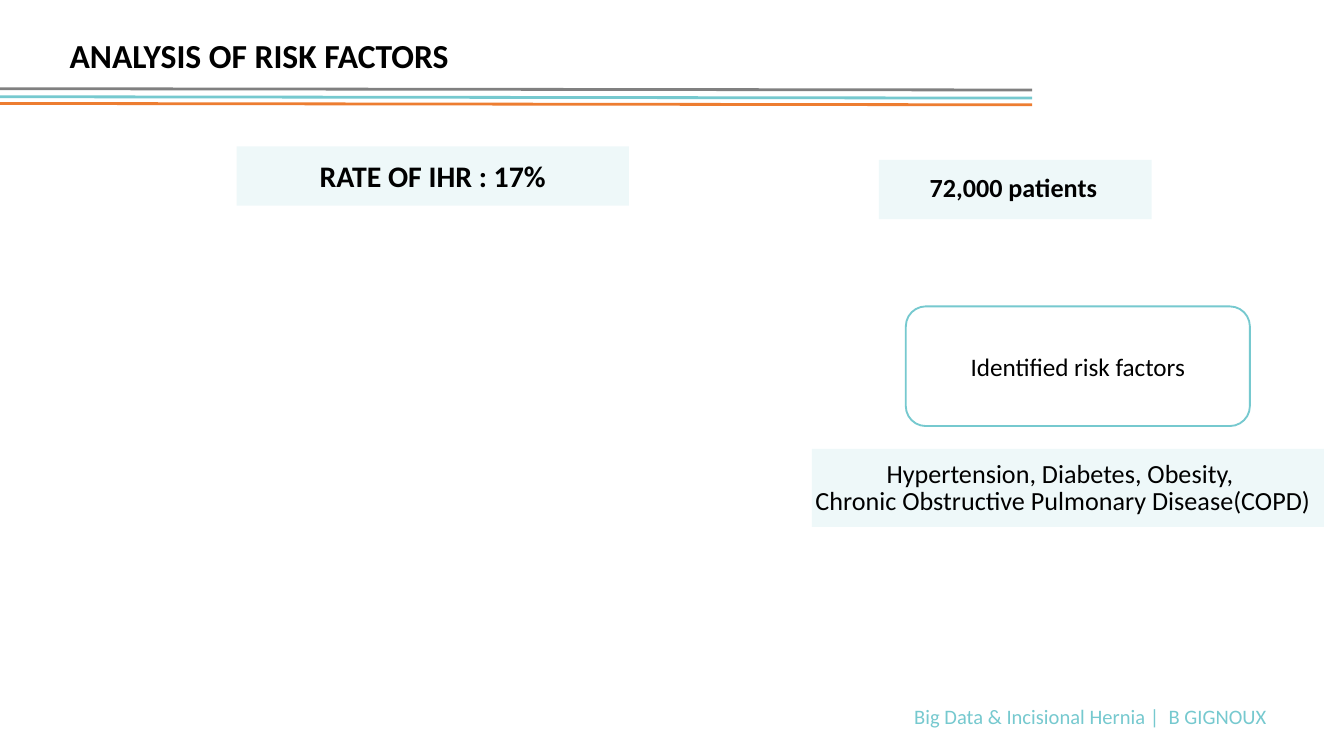
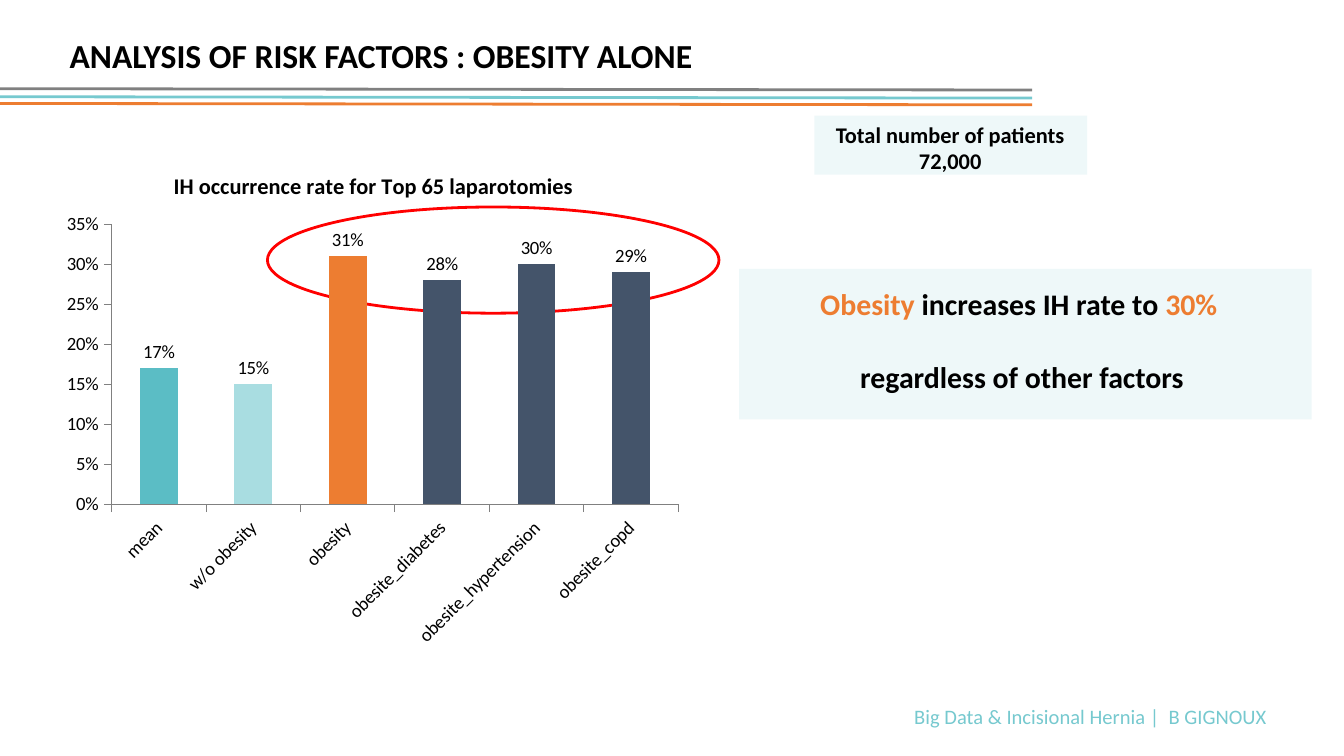
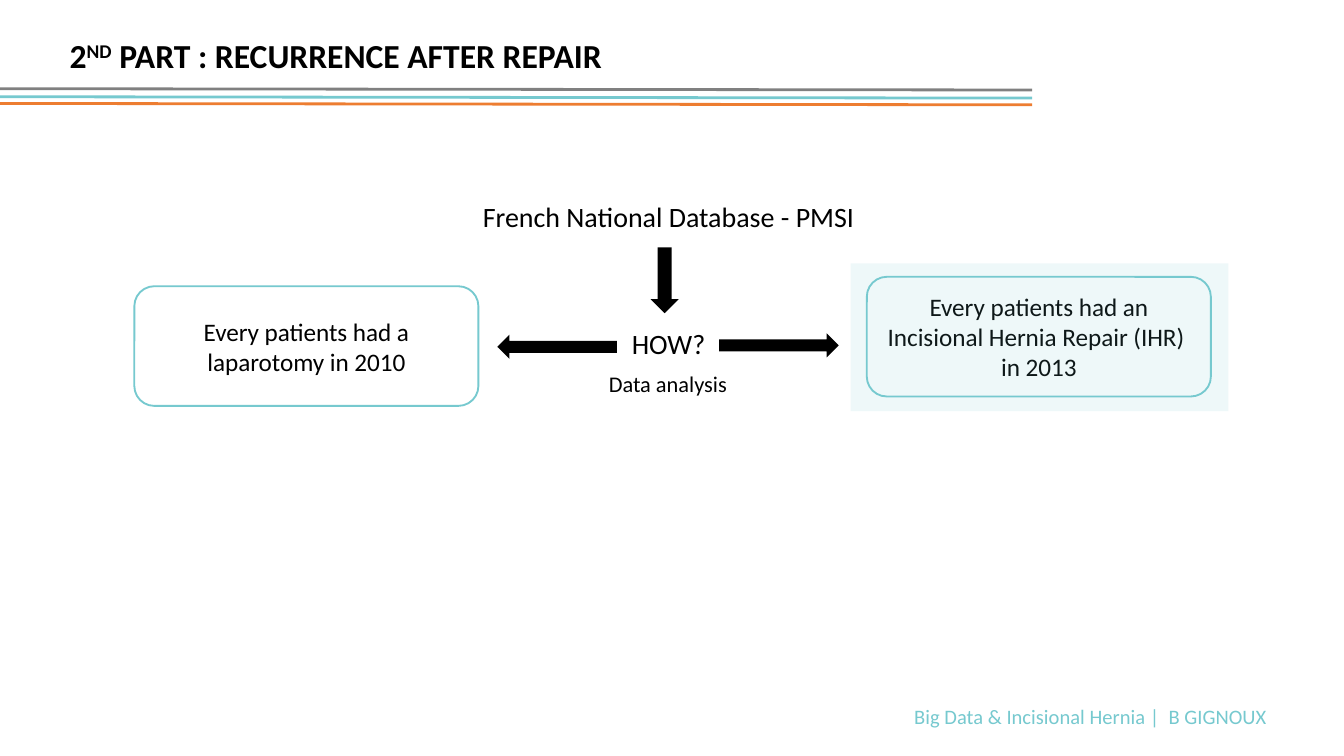
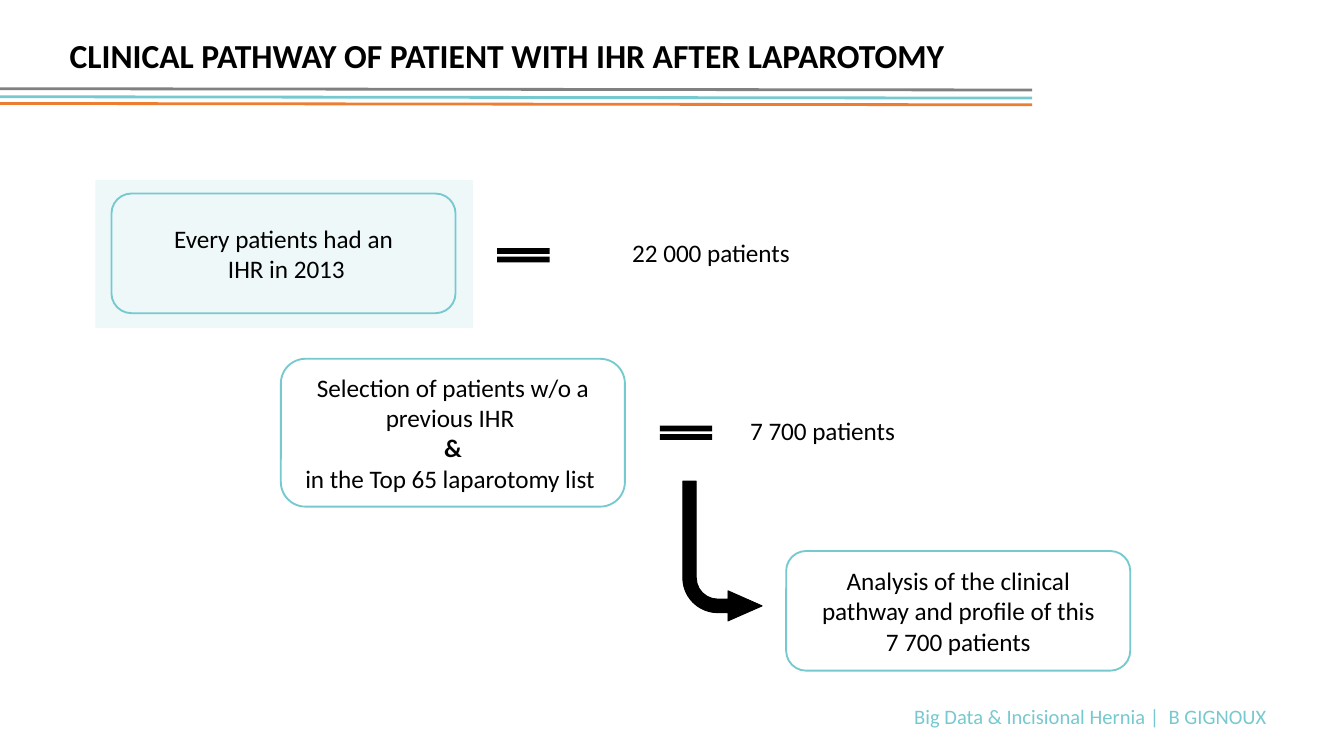
from dataclasses import dataclass
from typing import Optional

from lxml.etree import SubElement
from pptx import Presentation
from pptx.chart.data import CategoryChartData
from pptx.dml.color import RGBColor
from pptx.enum.chart import XL_CHART_TYPE as ChartType
from pptx.enum.chart import XL_LABEL_POSITION as LabelPosition
from pptx.enum.chart import XL_TICK_MARK as TickMark
from pptx.enum.shapes import MSO_CONNECTOR as Connector
from pptx.enum.shapes import MSO_SHAPE as Preset
from pptx.enum.text import MSO_ANCHOR as Anchor
from pptx.enum.text import PP_ALIGN as Align
from pptx.oxml.ns import qn
from pptx.util import Inches, Pt


@dataclass(frozen=True)
class Theme:
    """Colours, font and type sizes shared by the slides."""
    font: str = "Calibri"
    ink: str = "000000"
    paper: str = "FFFFFF"
    teal: str = "76C9CF"
    orange: str = "ED7D31"
    grey: str = "808080"
    red: str = "FF0000"
    mean_bar: str = "5BBDC5"
    light_bar: str = "A9DDE1"
    navy_bar: str = "44546A"
    tint_percent: int = 12
    title: float = 18
    key_message: float = 16
    heading: float = 15
    callout: float = 14
    body: float = 13.5
    caption: float = 12
    footer: float = 11
    chart: float = 10
    title_leading: float = 15
    tight_leading: float = 14.2


@dataclass(frozen=True)
class Run:
    """A stretch of text that departs from its paragraph's style."""
    text: str
    color: Optional[str] = None
    bold: Optional[bool] = None
    raised: bool = False


THEME = Theme()
RULES = ((0.72, THEME.teal), (0.77, THEME.orange), (0.66, THEME.grey))
RULE_LENGTH = 7.68
CARD_SIZE = (2.56, 0.89)
HALO_SIZE = (2.81, 1.1)
ARROW_SIZE = (0.89, 0.18)
EQUAL_SIZE = (0.53, 0.18)
COUNT_SIZE = (2.08, 0.44)
BADGE_SIZE = (2.03, 0.44)


def rgb(color):
    """Turn an RRGGBB string into a colour."""
    return RGBColor.from_string(color)


def style_font(font, size, color=THEME.ink, bold=False):
    """Apply the deck's font with a size, colour and weight."""
    font.name = THEME.font
    font.size = Pt(size)
    font.color.rgb = rgb(color)
    font.bold = bold


def write(shape, lines, size, color=THEME.ink, bold=False, align=Align.CENTER,
          anchor=Anchor.MIDDLE, leading=None, gap=0, wrap=True, inset=True):
    """Fill a shape with one paragraph per line."""
    frame = shape.text_frame
    frame.word_wrap = wrap
    frame.vertical_anchor = anchor
    if not inset:
        frame.margin_left = frame.margin_right = 0
        frame.margin_top = frame.margin_bottom = 0
    for position, line in enumerate(lines):
        paragraph = frame.add_paragraph() if position else frame.paragraphs[0]
        paragraph.alignment = align
        if leading:
            paragraph.line_spacing = Pt(leading)
        if position and gap:
            paragraph.space_before = Pt(gap)
        style_font(paragraph.font, size, color, bold)
        for part in [Run(line)] if isinstance(line, str) else line:
            run = paragraph.add_run()
            run.text = part.text
            if part.color:
                run.font.color.rgb = rgb(part.color)
            if part.bold is not None:
                run.font.bold = part.bold
            if part.raised:
                run.font._element.set("baseline", "30000")


def add_text(slide, place, lines, size, **style):
    """Add a text box."""
    box = slide.shapes.add_textbox(*map(Inches, place))
    write(box, lines, size, **style)


def add_label(slide, place, lines, size, leading=THEME.tight_leading, **style):
    """Add a centred label without margins that does not wrap."""
    add_text(slide, place, lines, size, leading=leading, wrap=False,
             inset=False, **style)


def add_preset(slide, preset, place, fill=None, line=None, width=1):
    """Add a flat preset shape."""
    shape = slide.shapes.add_shape(preset, *map(Inches, place))
    shape.shadow.inherit = False
    if fill:
        shape.fill.solid()
        shape.fill.fore_color.rgb = rgb(fill)
    else:
        shape.fill.background()
    if line:
        shape.line.color.rgb = rgb(line)
        shape.line.width = Pt(width)
    else:
        shape.line.fill.background()
    return shape


def add_tint(slide, place):
    """Add a translucent teal panel."""
    panel = add_preset(slide, Preset.RECTANGLE, place, THEME.teal)
    color = panel._element.spPr.find(qn("a:solidFill")).find(qn("a:srgbClr"))
    SubElement(color, qn("a:alpha"), val=str(THEME.tint_percent * 1000))
    return panel


def add_card(slide, left, top, lines, size=CARD_SIZE, fill=THEME.paper):
    """Add a rounded card with a teal outline."""
    card = add_preset(slide, Preset.ROUNDED_RECTANGLE, (left, top, *size),
                      fill, THEME.teal)
    write(card, lines, THEME.body)


def add_rules(slide):
    """Draw the three coloured rules below the title."""
    for top, color in RULES:
        ends = map(Inches, (0, top, RULE_LENGTH, top + 0.01))
        rule = slide.shapes.add_connector(Connector.STRAIGHT, *ends)
        rule.line.color.rgb = rgb(color)
        rule.line.width = Pt(1.5)
        SubElement(rule._element.spPr, qn("a:effectLst"))


def start_slide(deck, title):
    """Add a blank slide with footer, title and rules."""
    slide = deck.slides.add_slide(deck.slide_layouts[6])
    add_text(slide, (6.61, 5.15, 3.01, 0.36),
             ["Big Data & Incisional Hernia |  B GIGNOUX"],
             THEME.footer, color=THEME.teal)
    add_text(slide, (0.42, 0.3, 9.17, 0.22), [title], THEME.title, bold=True,
             align=Align.LEFT, anchor=Anchor.TOP,
             leading=THEME.title_leading)
    add_rules(slide)
    return slide


def place_chart_part(part, index, **fractions):
    """Give a chart part a manual layout in fractions of the chart."""
    layout = part.find(qn("c:layout"))
    if layout is not None:
        part.remove(layout)
    layout = part.makeelement(qn("c:layout"))
    part.insert(index, layout)
    manual = SubElement(layout, qn("c:manualLayout"))
    if "w" in fractions:
        SubElement(manual, qn("c:layoutTarget"), val="inner")
    for axis in "xy":
        SubElement(manual, qn(f"c:{axis}Mode"), val="edge")
    for name, value in fractions.items():
        SubElement(manual, qn(f"c:{name}"), val=str(value))


def style_axis(axis):
    """Give an axis outward ticks, a grey line and no gridlines."""
    axis.has_major_gridlines = False
    axis.major_tick_mark = TickMark.OUTSIDE
    axis.minor_tick_mark = TickMark.NONE
    axis.format.line.color.rgb = rgb(THEME.grey)
    axis.format.line.width = Pt(0.5)
    style_font(axis.tick_labels.font, THEME.chart)


def add_rate_chart(slide, place, title, rates):
    """Add a column chart of (category, rate, colour) entries."""
    data = CategoryChartData(number_format="0%")
    data.categories = [category for category, _, _ in rates]
    data.add_series("Series 1", [rate for _, rate, _ in rates])
    chart = slide.shapes.add_chart(ChartType.COLUMN_CLUSTERED,
                                   *map(Inches, place), data).chart
    style_font(chart.font, THEME.chart)
    chart.has_legend = False
    heading = chart.chart_title.text_frame.paragraphs[0]
    heading.text = title
    style_font(heading.font, THEME.caption, bold=True)
    style_font(heading.runs[0].font, THEME.caption, bold=True)
    place_chart_part(chart.chart_title._element, 1, x=0.18, y=0.03)
    plot_area = chart._chartSpace.chart.plotArea
    place_chart_part(plot_area, 0, x=0.09, y=0.14, w=0.88, h=0.53)

    style_axis(chart.category_axis)
    labels = chart.category_axis._element.find(qn("c:txPr"))
    labels.find(qn("a:bodyPr")).set("rot", "-2700000")
    style_axis(chart.value_axis)
    chart.value_axis.minimum_scale = 0
    chart.value_axis.maximum_scale = 0.35
    chart.value_axis.major_unit = 0.05
    chart.value_axis.tick_labels.number_format = "0%"
    chart.value_axis.tick_labels.number_format_is_linked = False

    plot = chart.plots[0]
    plot.gap_width = 150
    plot.vary_by_categories = False
    plot.has_data_labels = True
    plot.data_labels.show_value = True
    plot.data_labels.position = LabelPosition.OUTSIDE_END
    plot.data_labels.number_format = "0%"
    plot.data_labels.number_format_is_linked = False
    style_font(plot.data_labels.font, THEME.chart)
    for position, (_, _, color) in enumerate(rates):
        fill = plot.series[0].points[position].format.fill
        fill.solid()
        fill.fore_color.rgb = rgb(color)


def add_count(slide, equal_place, label_place, count):
    """Add an equal sign and the patient count that follows it."""
    add_preset(slide, Preset.MATH_EQUAL, (*equal_place, *EQUAL_SIZE), THEME.ink)
    add_label(slide, (*label_place, *COUNT_SIZE), [count], THEME.body)


def build_risk_factors(deck):
    """Build the overview of risk factors."""
    slide = start_slide(deck, "ANALYSIS OF RISK FACTORS")
    add_tint(slide, (6.54, 1.19, *BADGE_SIZE))
    add_label(slide, (6.65, 1.19, 1.78, 0.44), ["72,000 patients"],
              THEME.callout, bold=True)
    rate = add_tint(slide, (1.76, 1.09, 2.92, 0.44))
    write(rate, ["RATE OF IHR : 17%"], THEME.key_message, bold=True)
    add_tint(slide, (6.04, 3.34, 3.81, 0.58))
    add_card(slide, 6.74, 2.28, ["Identified risk factors"])
    add_label(slide, (6.06, 3.42, 3.7, 0.44),
              ["Hypertension, Diabetes, Obesity, ",
               "Chronic Obstructive Pulmonary Disease(COPD)"], THEME.callout)


def build_obesity(deck):
    """Build the chart of rates with obesity."""
    slide = start_slide(deck, "ANALYSIS OF RISK FACTORS : OBESITY ALONE")
    add_preset(slide, Preset.OVAL, (1.99, 1.54, 3.36, 0.79),
               THEME.paper, THEME.red, 1.5)
    add_tint(slide, (6.06, 0.86, *BADGE_SIZE))
    add_label(slide, (6.18, 0.88, 1.78, 0.44),
              ["Total number of patients", "72,000"], THEME.caption, bold=True)
    add_tint(slide, (5.5, 2, 4.26, 1.12))
    add_label(slide, (6, 2.31, 3.16, 0.44),
              [[Run("Obesity", THEME.orange), Run(" increases IH rate to "),
                Run("30%", THEME.orange)],
               " regardless of other factors"],
              THEME.key_message, bold=True, leading=None, gap=19.5)
    add_rate_chart(slide, (0.4, 1.12, 4.79, 3.93),
                   "IH occurrence rate for Top 65 laparotomies ",
                   [("mean", 0.17, THEME.mean_bar),
                    ("w/o obesity", 0.15, THEME.light_bar),
                    ("obesity", 0.31, THEME.orange),
                    ("obesite_diabetes", 0.28, THEME.navy_bar),
                    ("obesite_hypertension", 0.3, THEME.navy_bar),
                    ("obesite_copd", 0.29, THEME.navy_bar)])


def build_recurrence(deck):
    """Build the diagram that opens the second part."""
    slide = start_slide(deck, [Run("2"), Run("ND", raised=True),
                               Run(" PART : RECURRENCE AFTER REPAIR")])
    for place, text, size in (
            ((3.35, 1.54, 3.25, 0.28), "French National Database - PMSI", THEME.heading),
            ((4.59, 2.48, 0.77, 0.28), "HOW?", THEME.heading),
            ((4.44, 2.76, 1.06, 0.24), "Data analysis", THEME.caption)):
        add_label(slide, place, [text], size, anchor=Anchor.TOP)
    add_preset(slide, Preset.DOWN_ARROW, (4.84, 1.84, 0.21, 0.49), THEME.ink)
    add_card(slide, 1, 2.13, ["Every patients had a laparotomy in 2010"])
    add_card(slide, 6.45, 2.06,
             ["Every patients had an Incisional Hernia Repair (IHR) ", "in 2013"])
    add_preset(slide, Preset.RIGHT_ARROW, (5.35, 2.48, *ARROW_SIZE), THEME.ink)
    to_laparotomy = add_preset(slide, Preset.RIGHT_ARROW,
                               (3.7, 2.49, *ARROW_SIZE), THEME.ink)
    to_laparotomy.rotation = 180
    add_tint(slide, (6.33, 1.96, *HALO_SIZE))


def build_pathway(deck):
    """Build the selection of patients step by step."""
    slide = start_slide(
        deck, "CLINICAL PATHWAY OF PATIENT WITH IHR AFTER LAPAROTOMY")
    add_tint(slide, (0.71, 1.34, *HALO_SIZE))
    add_count(slide, (3.63, 1.81), (4.25, 1.67), "22 000 patients")
    add_count(slide, (4.84, 3.13), (5.08, 3), "7 700 patients")
    add_card(slide, 2.09, 2.67,
             ["Selection of patients w/o a previous IHR ",
              [Run("&", bold=True)], "in the Top 65 laparotomy list "],
             size=(2.56, 1.1))
    add_card(slide, 0.83, 1.44, ["Every patients had an", " IHR in 2013"],
             fill=None)
    add_card(slide, 5.85, 4.1,
             ["Analysis of the clinical pathway and profile of this",
              "7 700 patients"])
    to_analysis = add_preset(slide, Preset.BENT_ARROW, (5.08, 3.58, 0.59, 1.04),
                             THEME.ink, THEME.ink, 0.5)
    for position, ratio in enumerate((0.17, 0.19, 0.43, 0.44)):
        to_analysis.adjustments[position] = ratio
    to_analysis.rotation = 180
    to_analysis._element.spPr.get_or_add_xfrm().set("flipH", "1")


def main():
    """Build the deck and save it."""
    deck = Presentation()
    deck.slide_width = Inches(10)
    deck.slide_height = Inches(5.625)
    build_risk_factors(deck)
    build_obesity(deck)
    build_recurrence(deck)
    build_pathway(deck)
    deck.save("out.pptx")


if __name__ == "__main__":
    main()
